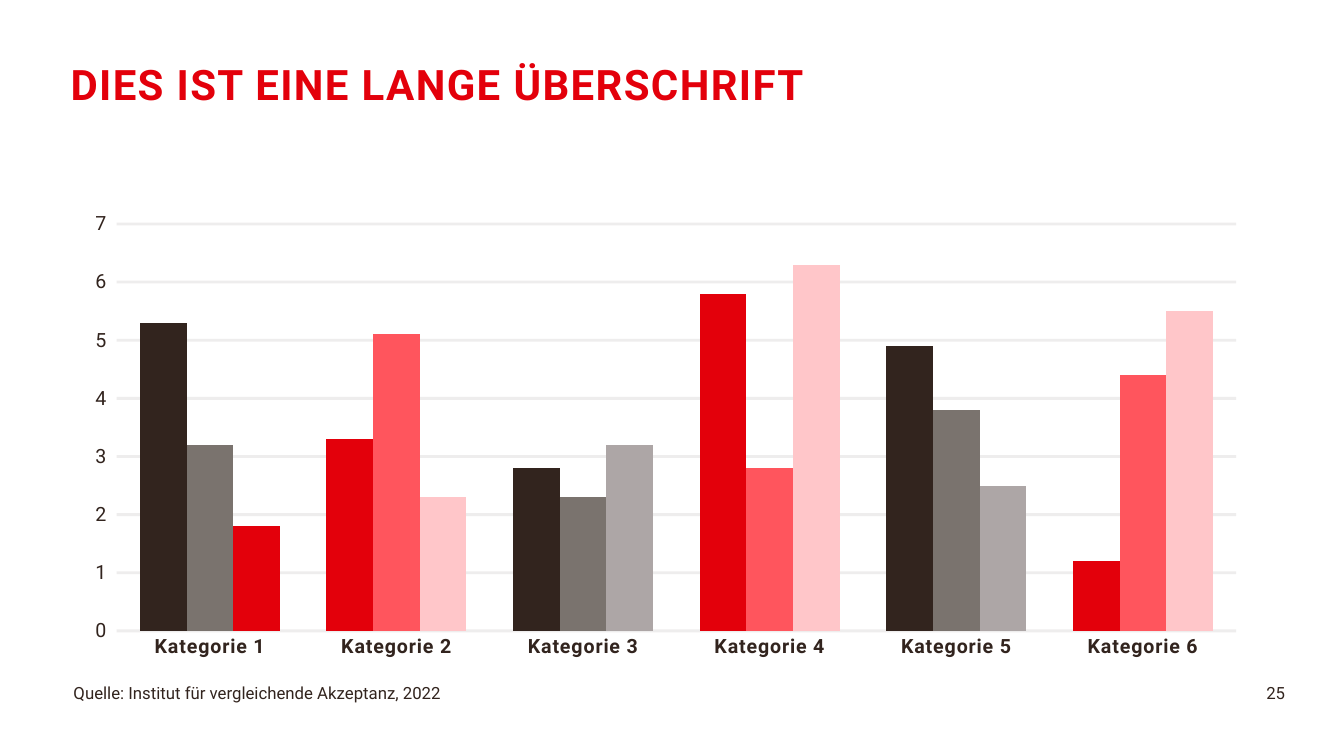
import pptx
import pptx.chart.data
import pptx.dml.color
import pptx.enum.chart
import pptx.enum.text
import pptx.oxml
import pptx.oxml.ns
import pptx.util

Pt = pptx.util.Pt
qn = pptx.oxml.ns.qn
FONT, DARK, RED, ROSE, PINK = "Roboto", "32241E", "E3000B", "FF555D", "FFC6C9"
CATEGORIES = [f"Kategorie {n}" for n in range(1, 7)]
SERIES = [
    ("Series 1", (5.3, 3.3, 2.8, 5.8, 4.9, 1.2), DARK, {1: RED, 3: RED, 5: RED}),
    ("Series 2", (3.2, 5.1, 2.3, 2.8, 3.8, 4.4), "7A736E", {1: ROSE, 3: ROSE, 5: ROSE}),
    ("Series 3", (1.8, 2.3, 3.2, 6.3, 2.5, 5.5), "ADA6A6", {0: RED, 1: PINK, 3: PINK, 5: PINK}),
]


def rgb(color):
    """Return the colour for a hex string."""
    return pptx.dml.color.RGBColor.from_string(color)


def set_font(font, size, color=DARK, bold=False):
    """Set face, size, colour and weight of a font."""
    font.name, font.size, font.bold = FONT, Pt(size), bold
    font.color.rgb = rgb(color)


def fill(fmt, color):
    """Give a chart element a solid fill."""
    fmt.fill.solid()
    fmt.fill.fore_color.rgb = rgb(color)


def add_text(slide, box, text, size, color=DARK, bold=False, align="LEFT"):
    """Add a one-paragraph text box without insets and return its paragraph."""
    tf = slide.shapes.add_textbox(*map(Pt, box)).text_frame
    tf.word_wrap = True
    tf.margin_left = tf.margin_top = tf.margin_right = tf.margin_bottom = 0
    p = tf.paragraphs[0]
    p.text = text
    p.alignment = getattr(pptx.enum.text.PP_ALIGN, align)
    set_font(p.font, size, color, bold)
    return p


def add_title(slide, box, text):
    """Add the red, letter-spaced heading."""
    p = add_text(slide, box, text, 30, RED, True)
    p.line_spacing = 0.85
    p.runs[0].font._element.set("spc", "100")


def add_footer(slide, box, source, number):
    """Add the source on the left and the page number on the right."""
    left, top, width, height = box
    number_width = 155
    add_text(slide, (left, top, width - number_width, height), source, 12)
    add_text(slide, (left + width - number_width, top, number_width, height),
             number, 12, align="RIGHT")


def set_plot_area(chart, **fractions):
    """Place the inner plot area by fractions of the chart."""
    area = chart._chartSpace.chart.plotArea
    for old in area.findall(qn("c:layout")):
        area.remove(old)
    parts = "".join(f'<c:{k} val="{v}"/>' for k, v in fractions.items())
    area.insert(0, pptx.oxml.parse_xml(
        f'<c:layout {pptx.oxml.ns.nsdecls("c")}><c:manualLayout>'
        '<c:layoutTarget val="inner"/><c:xMode val="edge"/><c:yMode val="edge"/>'
        f'{parts}</c:manualLayout></c:layout>'))


def style_axes(chart):
    """Style both axes and the faint gridlines."""
    tick = pptx.enum.chart.XL_TICK_MARK
    cat, val = chart.category_axis, chart.value_axis
    for axis, bold, mark in ((cat, True, tick.NONE), (val, False, tick.OUTSIDE)):
        set_font(axis.tick_labels.font, 14, bold=bold)
        axis.major_tick_mark, axis.minor_tick_mark = mark, tick.NONE
        axis.format.line.fill.background()
    cat._element.find(".//" + qn("a:defRPr")).set("spc", "50")
    val.minimum_scale, val.maximum_scale, val.major_unit = 0, 7, 1
    val.tick_labels.number_format = "General"
    val.tick_labels.number_format_is_linked = False
    val.has_major_gridlines = True
    grid = val.major_gridlines
    grid.format.line.width = Pt(2)
    grid.format.line.color.rgb = rgb(DARK)
    color = val._element.find(qn("c:majorGridlines")).find(".//" + qn("a:srgbClr"))
    color.append(pptx.oxml.parse_xml(f'<a:alpha {pptx.oxml.ns.nsdecls("a")} val="8000"/>'))


def add_column_chart(slide, box):
    """Add the clustered columns with their coloured points."""
    data = pptx.chart.data.CategoryChartData()
    data.categories = CATEGORIES
    for name, values, _, _ in SERIES:
        data.add_series(name, values)
    kind = pptx.enum.chart.XL_CHART_TYPE.COLUMN_CLUSTERED
    chart = slide.shapes.add_chart(kind, *map(Pt, box), data).chart
    chart.has_legend = chart.has_title = False
    set_font(chart.font, 10)
    plot = chart.plots[0]
    plot.gap_width, plot.overlap, plot.vary_by_categories = 100, 0, False
    for series, (_, _, color, points) in zip(plot.series, SERIES):
        series.invert_if_negative = False
        fill(series.format, color)
        for i, point_color in points.items():
            fill(series.points[i].format, point_color)
    style_axes(chart)
    set_plot_area(chart, x=0.038, y=0.046, w=0.942, h=0.874)


def main():
    """Build the slide and save it."""
    prs = pptx.Presentation()
    prs.slide_width, prs.slide_height = Pt(960), Pt(540)
    slide = prs.slides.add_slide(prs.slide_layouts[6])
    add_title(slide, (50.4, 47.5, 590, 80.5), "DIES IST EINE LANGE ÜBERSCHRIFT")
    add_column_chart(slide, (51, 144.7, 849, 332.6))
    add_footer(slide, (52.5, 487.5, 865.5, 29),
               "Quelle: Institut für vergleichende Akzeptanz, 2022", "25")
    prs.save("out.pptx")


if __name__ == "__main__":
    main()
